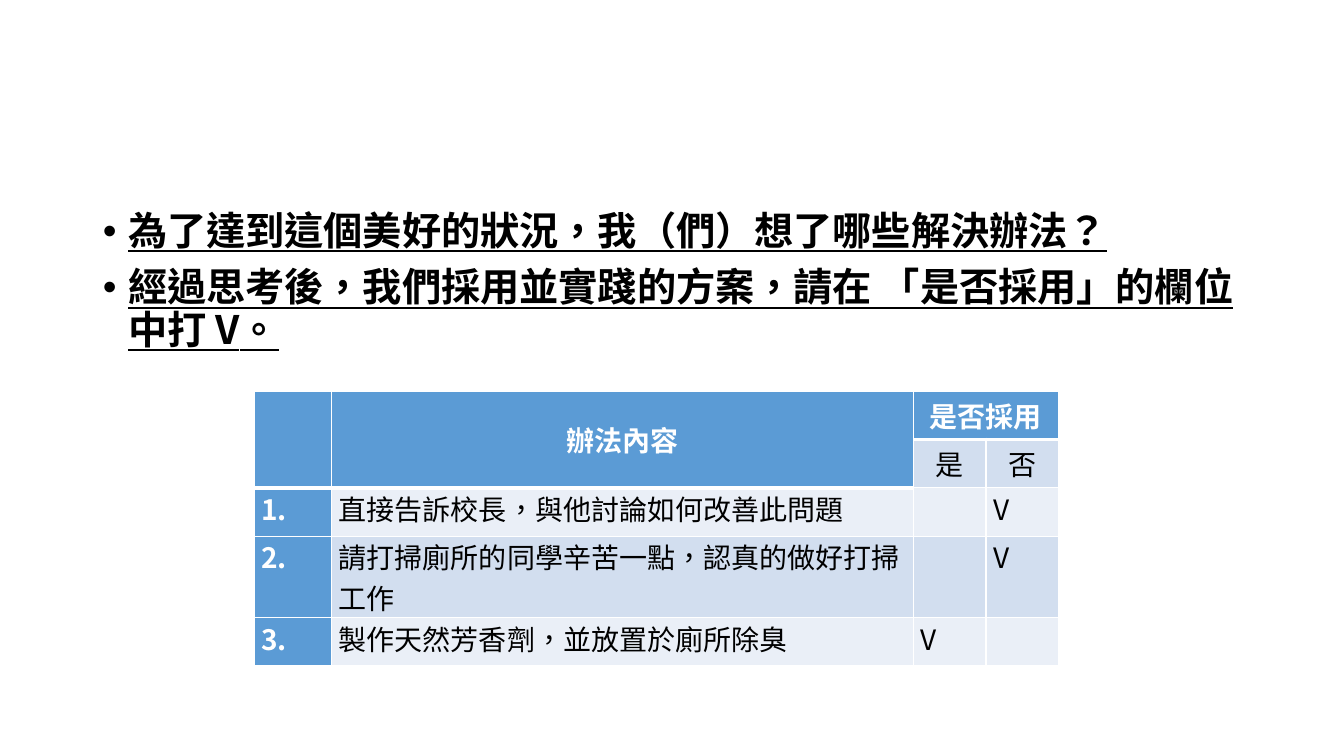
from typing import NamedTuple

from lxml import etree
from pptx import Presentation
from pptx.dml.color import RGBColor
from pptx.enum import lang, text
from pptx.oxml import ns
from pptx.util import Inches, Pt

FONT = "Noto Sans CJK SC"
BLACK = RGBColor(0x00, 0x00, 0x00)
WHITE = RGBColor(0xFF, 0xFF, 0xFF)
HEADER_BLUE = RGBColor(0x5B, 0x9B, 0xD5)
DARK_BAND = RGBColor(0xD2, 0xDE, 0xEF)
LIGHT_BAND = RGBColor(0xEA, 0xEF, 0xF7)

COLUMN_WIDTHS = (0.77, 5.77, 0.72, 0.72)
ROW_HEIGHTS = (0.48, 0.48, 0.48, 0.79, 0.48)
HEADER_ROWS = 2
THIN, THICK = 1, 3

QUESTIONS = (
    "為了達到這個美好的狀況，我（們）想了哪些解決辦法？",
    "經過思考後，我們採用並實踐的方案，請在 「是否採用」的欄位中打 V。",
)


class Row(NamedTuple):
    label: str
    method: str
    yes: str
    no: str


ROWS = (
    Row("", "辦法內容", "是否採用", ""),
    Row("", "", "是", "否"),
    Row("1.", "直接告訴校長，與他討論如何改善此問題", "", "V"),
    Row("2.", "請打掃廁所的同學辛苦一點，認真的做好打掃工作", "", "V"),
    Row("3.", "製作天然芳香劑，並放置於廁所除臭", "V", ""),
)


def format_runs(paragraph, size: float, color: RGBColor, bold: bool, underline: bool = False) -> None:
    for run in paragraph.runs:
        run.font.name = FONT
        run.font.size = Pt(size)
        run.font.bold = bold
        run.font.underline = underline
        run.font.color.rgb = color
        run.font.language_id = lang.MSO_LANGUAGE_ID.TRADITIONAL_CHINESE
        east_asian = etree.SubElement(run._r.get_or_add_rPr(), ns.qn("a:ea"))
        east_asian.set("typeface", FONT)


def fill_body(body) -> None:
    body.left, body.top = Inches(0.92), Inches(2.05)
    body.width, body.height = Inches(11.5), Inches(4.76)
    frame = body.text_frame
    frame.text = "\n".join(QUESTIONS)
    frame.word_wrap = True
    frame.auto_size = text.MSO_AUTO_SIZE.NONE
    frame.vertical_anchor = text.MSO_ANCHOR.TOP
    for index, paragraph in enumerate(frame.paragraphs):
        properties = paragraph._p.get_or_add_pPr()
        properties.set("marL", str(Inches(0.25)))
        properties.set("indent", str(-Inches(0.25)))
        etree.SubElement(properties, ns.qn("a:buFont")).set("typeface", "Arial")
        etree.SubElement(properties, ns.qn("a:buChar")).set("char", "•")
        paragraph.line_spacing = 0.9
        paragraph.space_before = Pt(10 if index else 0)
        format_runs(paragraph, 28, BLACK, bold=True, underline=True)


def add_borders(cell, top: float, bottom: float) -> None:
    properties = cell._tc.get_or_add_tcPr()
    for side, width in (("L", THIN), ("R", THIN), ("T", top), ("B", bottom)):
        line = etree.SubElement(properties, ns.qn(f"a:ln{side}"), w=str(Pt(width)))
        fill = etree.SubElement(line, ns.qn("a:solidFill"))
        etree.SubElement(fill, ns.qn("a:srgbClr"), val=str(WHITE))


def last_header_row(column: int) -> int:
    return 1 if column < 2 else 0


def format_cell(cell, row: int, column: int, content: str) -> None:
    header_end = last_header_row(column)
    is_blue = row <= header_end or column == 0
    add_borders(
        cell,
        top=THICK if row == header_end + 1 else THIN,
        bottom=THICK if row == header_end else THIN,
    )
    cell.fill.solid()
    cell.fill.fore_color.rgb = HEADER_BLUE if is_blue else DARK_BAND if row % 2 else LIGHT_BAND
    cell.margin_left = cell.margin_right = Inches(0.07)
    cell.margin_top = cell.margin_bottom = 0
    if not content:
        return
    cell.text_frame.text = content
    paragraph = cell.text_frame.paragraphs[0]
    if row < HEADER_ROWS:
        cell.vertical_anchor = text.MSO_ANCHOR.MIDDLE
        paragraph.alignment = text.PP_ALIGN.CENTER
    format_runs(paragraph, 20, WHITE if is_blue else BLACK, bold=is_blue)


def add_methods_table(slide) -> None:
    table = slide.shapes.add_table(
        len(ROWS), len(COLUMN_WIDTHS), Inches(2.52), Inches(3.88),
        Inches(sum(COLUMN_WIDTHS)), Inches(sum(ROW_HEIGHTS)),
    ).table
    for column, width in zip(table.columns, COLUMN_WIDTHS):
        column.width = Inches(width)
    for row, height in zip(table.rows, ROW_HEIGHTS):
        row.height = Inches(height)
    for row_index, row in enumerate(ROWS):
        for column_index, content in enumerate(row):
            format_cell(table.cell(row_index, column_index), row_index, column_index, content)
    # Header spans
    for column in (0, 1):
        table.cell(0, column).merge(table.cell(1, column))
    table.cell(0, 2).merge(table.cell(0, 3))


def main() -> None:
    presentation = Presentation()
    presentation.slide_width, presentation.slide_height = Inches(13.33), Inches(7.5)
    slide = presentation.slides.add_slide(presentation.slide_layouts[1])

    # The slide has no title
    title = slide.shapes.title._element
    title.getparent().remove(title)

    # Questions and table of methods
    fill_body(slide.placeholders[1])
    add_methods_table(slide)
    presentation.save("out.pptx")


if __name__ == "__main__":
    main()
